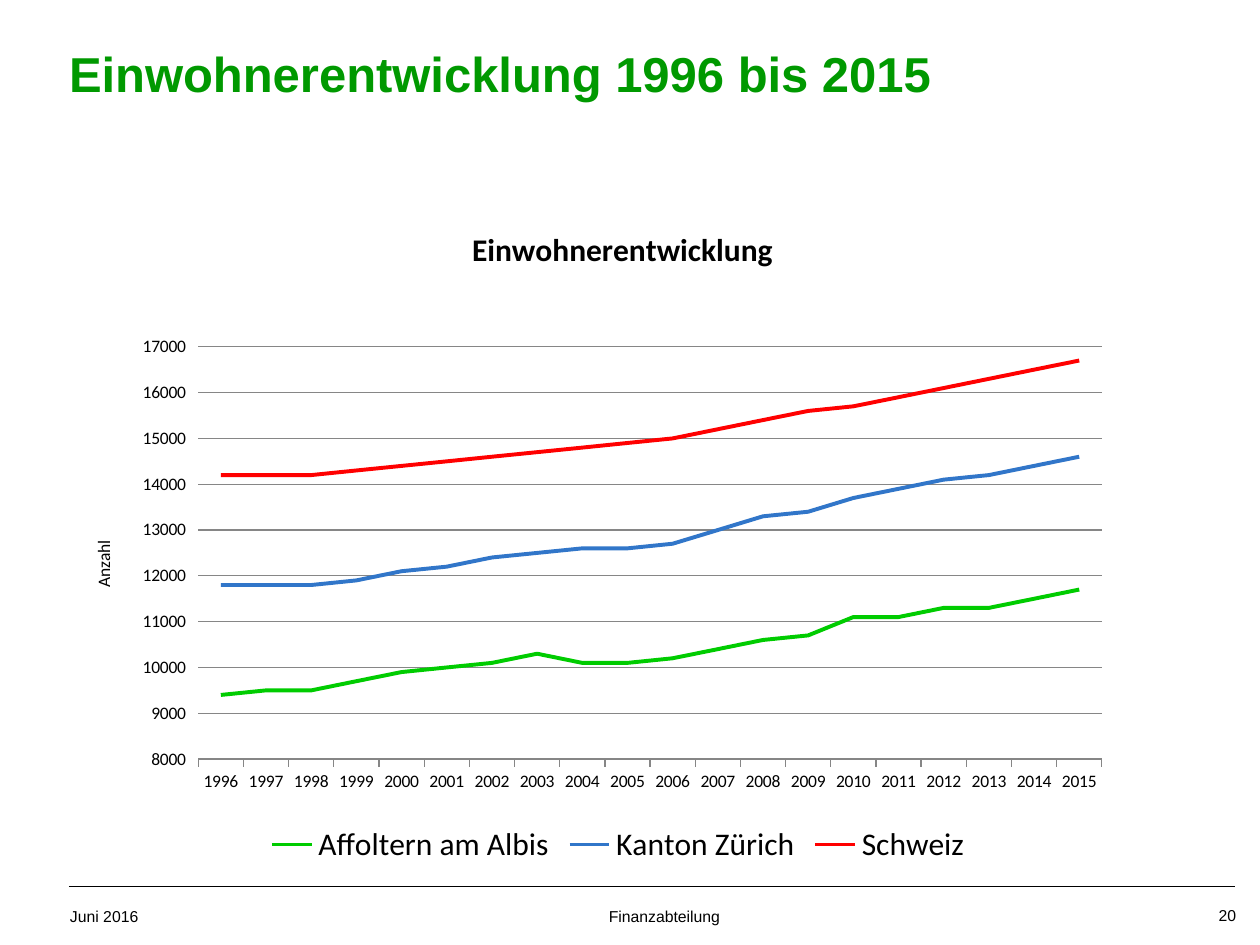
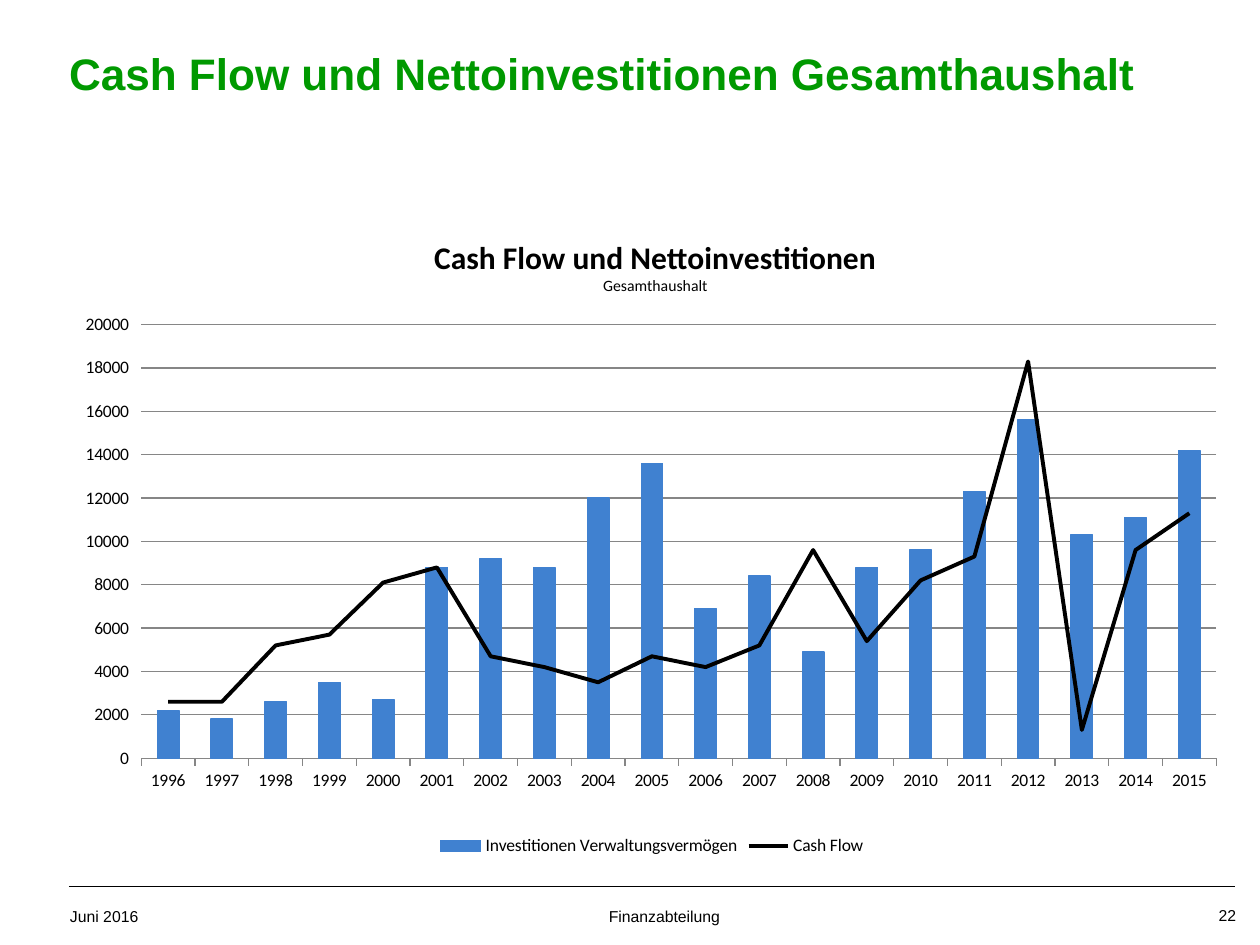
from lxml import etree
from pptx import Presentation
from pptx.chart.data import CategoryChartData
from pptx.dml.color import RGBColor
from pptx.enum.chart import XL_CHART_TYPE as ChartType
from pptx.enum.chart import XL_LEGEND_POSITION as LegendPosition
from pptx.enum.chart import XL_MARKER_STYLE as MarkerStyle
from pptx.enum.chart import XL_TICK_MARK as TickMark
from pptx.enum.shapes import MSO_CONNECTOR as Connector
from pptx.enum.text import MSO_ANCHOR as Anchor
from pptx.enum.text import MSO_AUTO_SIZE as AutoSize
from pptx.enum.text import PP_ALIGN as Align
from pptx.oxml.ns import qn
from pptx.util import Pt

EMU_PER_PX = 914400 / 126
COLORS = {
    "title": "009900",
    "text": "000000",
    "grid": "868686",
    "town": "00CC00",
    "canton": "3176C9",
    "country": "FF0000",
    "investment": "4081D0",
    "cash_flow": "000000",
}
YEARS = [str(year) for year in range(1996, 2016)]
POPULATION = {
    "Affoltern am Albis": (
        9400, 9500, 9500, 9700, 9900, 10000, 10100, 10300, 10100, 10100,
        10200, 10400, 10600, 10700, 11100, 11100, 11300, 11300, 11500, 11700),
    "Kanton Zürich": (
        11800, 11800, 11800, 11900, 12100, 12200, 12400, 12500, 12600, 12600,
        12700, 13000, 13300, 13400, 13700, 13900, 14100, 14200, 14400, 14600),
    "Schweiz": (
        14200, 14200, 14200, 14300, 14400, 14500, 14600, 14700, 14800, 14900,
        15000, 15200, 15400, 15600, 15700, 15900, 16100, 16300, 16500, 16700),
}
FINANCES = {
    "Investitionen Verwaltungsvermögen": (
        2200, 1800, 2600, 3500, 2700, 8800, 9200, 8800, 12000, 13600,
        6900, 8400, 4900, 8800, 9600, 12300, 15600, 10300, 11100, 14200),
    "Cash Flow": (
        2600, 2600, 5200, 5700, 8100, 8800, 4700, 4200, 3500, 4700,
        4200, 5200, 9600, 5400, 8200, 9300, 18300, 1300, 9600, 11300),
}


def px(*lengths):
    """Return the lengths in EMU."""
    return [round(length * EMU_PER_PX) for length in lengths]


def color(name):
    """Return a colour of the palette."""
    return RGBColor.from_string(COLORS[name])


def set_attributes(target, values):
    """Set each named attribute on the target."""
    for name, value in values.items():
        setattr(target, name, value)


def set_font(font, size, name="Calibri", color_name="text", bold=False):
    """Give a font its face, size, weight and colour."""
    set_attributes(font, {"name": name, "size": Pt(size), "bold": bold})
    font.color.rgb = color(color_name)


def set_line(line, color_name, width):
    """Give a line its colour and width."""
    line.color.rgb = color(color_name)
    line.width = Pt(width)


def fill_frame(frame, text, size, insets, align=Align.LEFT, anchor=Anchor.TOP,
               wrap=True, **font_values):
    """Put one formatted paragraph into a text frame."""
    left, right = px(*insets)
    top, bottom = px(6, 6)
    set_attributes(frame, {
        "word_wrap": wrap, "auto_size": AutoSize.NONE,
        "vertical_anchor": anchor, "margin_left": left, "margin_right": right,
        "margin_top": top, "margin_bottom": bottom,
    })
    paragraph = frame.paragraphs[0]
    paragraph.text = text
    paragraph.alignment = align
    set_font(paragraph.runs[0].font, size, "Arial", **font_values)


def add_footer(slide, number):
    """Draw the rule, date, department and slide number."""
    rule = slide.shapes.add_connector(Connector.STRAIGHT, *px(69, 886, 1235, 886))
    set_line(rule.line, "text", 0.5)
    etree.SubElement(rule._element.spPr, qn("a:effectLst"))
    footer_parts = (
        ("Juni 2016", (70, 901, 156, 25), (0, 13), Align.LEFT),
        (number, (1182, 900, 54, 26), (13, 0), Align.RIGHT),
        ("Finanzabteilung", (437, 901, 455, 25), (13, 13), Align.CENTER),
    )
    for text, box, insets, align in footer_parts:
        shape = slide.shapes.add_textbox(*px(*box))
        fill_frame(shape.text_frame, text, 9, insets, align)


def add_titled_slide(presentation, title, title_size, number):
    """Add a slide with its title and footer."""
    slide = presentation.slides.add_slide(presentation.slide_layouts[5])
    shape = slide.shapes.title
    box = px(69, 24, 1082, 98)
    set_attributes(shape, dict(zip(("left", "top", "width", "height"), box)))
    fill_frame(shape.text_frame, title, title_size, (0, 13), anchor=Anchor.MIDDLE,
               color_name="title", bold=True)
    add_footer(slide, number)
    return slide


def set_layout(element, index, **values):
    """Place a chart part by fractions of the chart area."""
    for old_layout in element.findall(qn("c:layout")):
        element.remove(old_layout)
    layout = etree.Element(qn("c:layout"))
    element.insert(index, layout)
    manual = etree.SubElement(layout, qn("c:manualLayout"))
    for name, value in values.items():
        etree.SubElement(manual, qn(f"c:{name}"), val=str(value))


def set_plot_area(chart, x, y, w, h):
    """Place the inner plot area."""
    set_layout(chart._chartSpace.chart.plotArea, 0, layoutTarget="inner",
               xMode="edge", yMode="edge", x=x, y=y, w=w, h=h)


def set_chart_title(chart, lines, x, y):
    """Write and place the chart title from (text, size, bold) lines."""
    frame = chart.chart_title.text_frame
    for index, (text, size, bold) in enumerate(lines):
        paragraph = frame.add_paragraph() if index else frame.paragraphs[0]
        run = paragraph.add_run()
        run.text = text
        set_font(run.font, size, bold=bold)
    set_layout(chart.chart_title._element, 1, xMode="edge", yMode="edge", x=x, y=y)


def format_axes(chart, minimum, maximum, step):
    """Format both axes and the gridlines."""
    value_axis = chart.value_axis
    set_attributes(value_axis, {
        "minimum_scale": minimum, "maximum_scale": maximum,
        "major_unit": step, "has_major_gridlines": True,
    })
    for axis in (chart.category_axis, value_axis):
        set_attributes(axis, {"major_tick_mark": TickMark.OUTSIDE,
                              "minor_tick_mark": TickMark.NONE})
        set_font(axis.tick_labels.font, 10)
    set_line(chart.category_axis.format.line, "grid", 0.75)
    set_line(value_axis.major_gridlines.format.line, "grid", 0.75)
    value_axis.format.line.fill.background()


def add_year_chart(slide, chart_type, box, series_values, legend_size):
    """Add a chart over the years with a legend below."""
    chart_data = CategoryChartData()
    chart_data.categories = YEARS
    for name, values in series_values.items():
        chart_data.add_series(name, values)
    chart = slide.shapes.add_chart(chart_type, *px(*box), chart_data).chart
    set_font(chart.font, 18)
    chart.has_legend = True
    set_attributes(chart.legend, {"position": LegendPosition.BOTTOM,
                                  "include_in_layout": False})
    set_font(chart.legend.font, legend_size)
    chart.plots[0].vary_by_categories = False
    return chart


def format_line_series(series, color_name):
    """Draw a series as a plain straight line."""
    series.smooth = False
    series.marker.style = MarkerStyle.NONE
    set_line(series.format.line, color_name, 2.25)


def move_last_series_to_line(chart):
    """Turn the last column series into a line on the same axes."""
    columns = chart.plots[0]._element
    series = columns.findall(qn("c:ser"))[-1]
    for invert in series.findall(qn("c:invertIfNegative")):
        series.remove(invert)
    line_chart = etree.Element(qn("c:lineChart"))
    etree.SubElement(line_chart, qn("c:grouping"), val="standard")
    etree.SubElement(line_chart, qn("c:varyColors"), val="0")
    line_chart.append(series)
    etree.SubElement(line_chart, qn("c:marker"), val="1")
    for axis_id in columns.findall(qn("c:axId")):
        etree.SubElement(line_chart, qn("c:axId"), val=axis_id.get("val"))
    columns.addnext(line_chart)


def add_population_chart(slide):
    """Add the line chart of the population."""
    chart = add_year_chart(slide, ChartType.LINE, (35, 195, 1166, 675),
                           POPULATION, 18)
    set_chart_title(chart, [("Einwohnerentwicklung", 18, True)], 0.37, 0.04)
    set_plot_area(chart, 0.14, 0.225, 0.775, 0.611)
    format_axes(chart, 8000, 17000, 1000)
    axis_title = chart.value_axis.axis_title.text_frame
    axis_title.text = "Anzahl"
    set_font(axis_title.paragraphs[0].runs[0].font, 10)
    for series, color_name in zip(chart.series, ("town", "canton", "country")):
        format_line_series(series, color_name)


def add_finance_chart(slide):
    """Add the column and line chart of investments and cash flow."""
    chart = add_year_chart(slide, ChartType.COLUMN_CLUSTERED,
                           (69, 207, 1166, 654), FINANCES, 10)
    title_lines = [("Cash Flow und Nettoinvestitionen", 18, True),
                   ("Gesamthaushalt", 9, False)]
    set_chart_title(chart, title_lines, 0.31, 0.04)
    set_plot_area(chart, 0.062, 0.18, 0.922, 0.663)
    format_axes(chart, 0, 20000, 2000)
    move_last_series_to_line(chart)
    columns, lines = chart.plots
    columns.gap_width = 150
    investment = columns.series[0].format
    investment.fill.solid()
    investment.fill.fore_color.rgb = color("investment")
    set_line(investment.line, "investment", 0.75)
    format_line_series(lines.series[0], "cash_flow")


def main():
    """Build and save the presentation."""
    presentation = Presentation()
    width, height = px(1260, 945)
    set_attributes(presentation, {"slide_width": width, "slide_height": height})
    add_population_chart(add_titled_slide(
        presentation, "Einwohnerentwicklung 1996 bis 2015", 28, "20"))
    add_finance_chart(add_titled_slide(
        presentation, "Cash Flow und Nettoinvestitionen Gesamthaushalt", 25.2, "22"))
    presentation.save("out.pptx")


if __name__ == "__main__":
    main()
